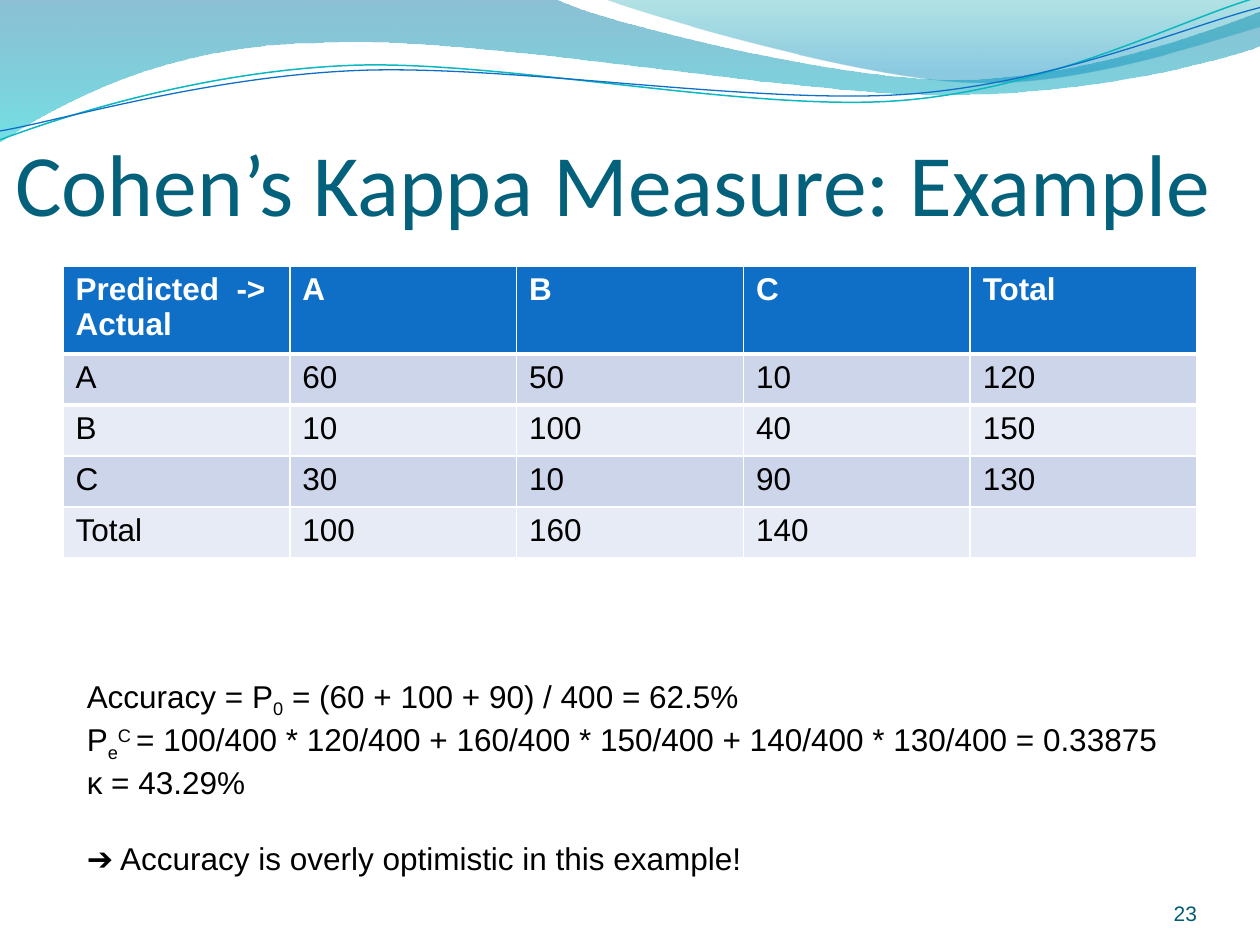
from lxml import etree
from pptx import Presentation
from pptx.dml.color import RGBColor
from pptx.enum.text import MSO_ANCHOR, PP_ALIGN
from pptx.oxml.ns import qn
from pptx.util import Inches, Pt

TOP, BOTTOM = MSO_ANCHOR.TOP, MSO_ANCHOR.BOTTOM
LEFT, RIGHT = PP_ALIGN.LEFT, PP_ALIGN.RIGHT

# Content
TITLE = "Cohen’s Kappa Measure: Example"
PAGE_NUMBER = "23"
CONFUSION_MATRIX = [
    ["Predicted  ->\nActual", "A", "B", "C", "Total"],
    ["A", "60", "50", "10", "120"],
    ["B", "10", "100", "40", "150"],
    ["C", "30", "10", "90", "130"],
    ["Total", "100", "160", "140", ""],
]
# Each line is a list of (text, baseline shift in percent)
CALCULATION = [
    [("Accuracy = P", 0), ("0", -25), (" = (60 + 100 + 90) / 400 = 62.5%", 0)],
    [("P", 0), ("e", -25), ("C ", 30),
     ("= 100/400 * 120/400 + 160/400 * 150/400 + 140/400 * 130/400 = 0.33875", 0)],
    [("κ = 43.29%", 0)],
    [("➔ Accuracy is overly optimistic in this example!", 0)],
]

THEME = {
    "title": {"name": "Calibri", "size": Pt(50), "color": "04617B"},
    "header": {"name": "Arial", "size": Pt(18), "bold": True, "color": "FFFFFF"},
    "body": {"name": "Arial", "size": Pt(18), "bold": False, "color": "000000"},
    "page": {"name": "Arial", "size": Pt(12), "color": "045D75"},
    "header_fill": "0F6FC6",
    "header_rule": ("FFFFFF", Pt(3)),
    "band_fills": ["CCD5EA", "E7EBF5"],
}

# Wave outlines: a 2-tuple is a straight step, a 6-tuple a Bezier curve.
# Gradient stops are (position, colour, opacity in percent).
WAVE_BANDS = [
    ([(0, -0.01), (4.4, -0.01), (4.76, 0.17, 6.64, 0.63, 7.58, 0.63),
      (8.53, 0.63, 9.58, 0.26, 10, 0.09), (10.01, 0.36),
      (9.83, 0.44, 8.7, 0.76, 7.46, 0.75), (6.22, 0.75, 3.82, 0.28, 2.57, 0.34),
      (1.29, 0.35, 0.46, 0.83, -0.01, 1.13), (0, -0.01)],
     [(0, "0074A1", 45), (1, "00C6CF", 55)]),
    ([(4.79, -0.01), (5.09, 0.11, 6.82, 0.62, 7.69, 0.65),
      (8.56, 0.69, 9.61, 0.32, 10, 0.21), (10, 0), (4.79, -0.01)],
     [(0, "00A1A9", 30), (0.8, "008BBF", 45)]),
]
WAVE_LINES = [
    ([(0, 1.11), (0.48, 0.93, 1.58, 0.57, 2.77, 0.52),
      (3.95, 0.47, 5.93, 0.89, 7.13, 0.8), (8.33, 0.71, 9.38, 0.15, 9.98, -0.02)],
     "0AB8BF", 0.85),
    ([(0, 1.04), (0.47, 0.96, 1.64, 0.61, 2.83, 0.56),
      (4.03, 0.51, 5.97, 0.83, 7.17, 0.75), (8.36, 0.67, 9.41, 0.21, 10, 0.06)],
     "0F6FC6", 0.75),
]


def rgb(value):
    return RGBColor.from_string(value)


def set_font(font, style):
    for key, value in style.items():
        if key == "color":
            font.color.rgb = rgb(value)
        else:
            setattr(font, key, value)


def add_wave(slide, steps, close):
    """Draw the control points as segments, then join each three into a curve."""
    start, *rest = [(Inches(step[i]), Inches(step[i + 1]))
                    for step in steps for i in range(0, len(step), 2)]
    builder = slide.shapes.build_freeform(*start)
    builder.add_line_segments(rest, close=close)
    wave = builder.convert_to_shape()
    wave.shadow.inherit = False
    segments = iter(list(wave._element.iter(qn("a:lnTo"))))
    for step in steps[1:]:
        first = next(segments)
        if len(step) == 6:
            first.tag = qn("a:cubicBezTo")
            for _ in range(2):
                control = next(segments)
                first.append(control[0])
                control.getparent().remove(control)
    return wave


def add_text(slide, box, lines, style, insets, anchor=TOP, align=LEFT, wrap=True):
    frame = slide.shapes.add_textbox(*map(Inches, box)).text_frame
    margins = zip(("margin_left", "margin_top", "margin_right", "margin_bottom"),
                  map(Inches, insets))
    for key, value in {"word_wrap": wrap, "vertical_anchor": anchor, **dict(margins)}.items():
        setattr(frame, key, value)
    for i, line in enumerate(lines):
        paragraph = frame.add_paragraph() if i else frame.paragraphs[0]
        paragraph.alignment = align
        for text, shift in line:
            run = paragraph.add_run()
            run.text = text
            set_font(run.font, style)
            if shift:
                run.font._element.set("baseline", str(shift * 1000))
    return frame


def add_rule(cell, side):
    color, width = THEME["header_rule"]
    rule = etree.Element(qn(side), w=str(width))
    fill = etree.SubElement(rule, qn("a:solidFill"))
    etree.SubElement(fill, qn("a:srgbClr"), val=color)
    cell._tc.get_or_add_tcPr().insert(0, rule)


def add_matrix(slide):
    rows, columns = len(CONFUSION_MATRIX), len(CONFUSION_MATRIX[0])
    height, header_height = 2.32, 0.7
    row_height = (height - header_height) / (rows - 1)
    table = slide.shapes.add_table(rows, columns, Inches(0.5), Inches(2.11),
                                   Inches(9), Inches(height)).table
    for r, values in enumerate(CONFUSION_MATRIX):
        table.rows[r].height = Inches(row_height if r else header_height)
        style = THEME["body" if r else "header"]
        fill = THEME["band_fills"][(r - 1) % 2] if r else THEME["header_fill"]
        for c, value in enumerate(values):
            cell = table.cell(r, c)
            cell.text = value
            cell.fill.solid()
            cell.fill.fore_color.rgb = rgb(fill)
            if r < 2:
                add_rule(cell, "a:lnT" if r else "a:lnB")
            for paragraph in cell.text_frame.paragraphs:
                for run in paragraph.runs:
                    set_font(run.font, style)


def main():
    prs = Presentation()
    prs.slide_width, prs.slide_height = Inches(10), Inches(7.5)
    slide = prs.slides.add_slide(prs.slide_layouts[6])

    # Wave decoration
    for steps, stops in WAVE_BANDS:
        band = add_wave(slide, steps, close=True)
        band.line.fill.background()
        band.fill.gradient()
        band.fill.gradient_angle = 270
        for stop, (position, color, _) in zip(band.fill.gradient_stops, stops):
            stop.position = position
            stop.color.rgb = rgb(color)
        for node, (_, _, opacity) in zip(band._element.spPr.iter(qn("a:srgbClr")), stops):
            etree.SubElement(node, qn("a:alpha")).set("val", str(opacity * 1000))
    for steps, color, width in WAVE_LINES:
        line = add_wave(slide, steps, close=False)
        line.fill.background()
        line.line.color.rgb = rgb(color)
        line.line.width = Pt(width)

    # Title, confusion matrix and page number
    add_text(slide, (0.12, 0.77, 9.88, 1.09), [[(TITLE, 0)]], THEME["title"],
             (0, 0.05, 0, 0), anchor=BOTTOM)
    add_matrix(slide)
    add_text(slide, (8.67, 6.95, 0.83, 0.4), [[(PAGE_NUMBER, 0)]], THEME["page"],
             (0, 0, 0, 0), anchor=BOTTOM, align=RIGHT)

    # Calculation, with the conclusion set apart
    calculation = add_text(slide, (0.59, 5.32, 8.81, 1.62), CALCULATION, THEME["body"],
                           (0.1, 0.05, 0.1, 0.05), wrap=False)
    calculation.paragraphs[1].space_before = Pt(0.5)
    calculation.paragraphs[-1].space_before = Pt(21.5)

    prs.save("out.pptx")


if __name__ == "__main__":
    main()
